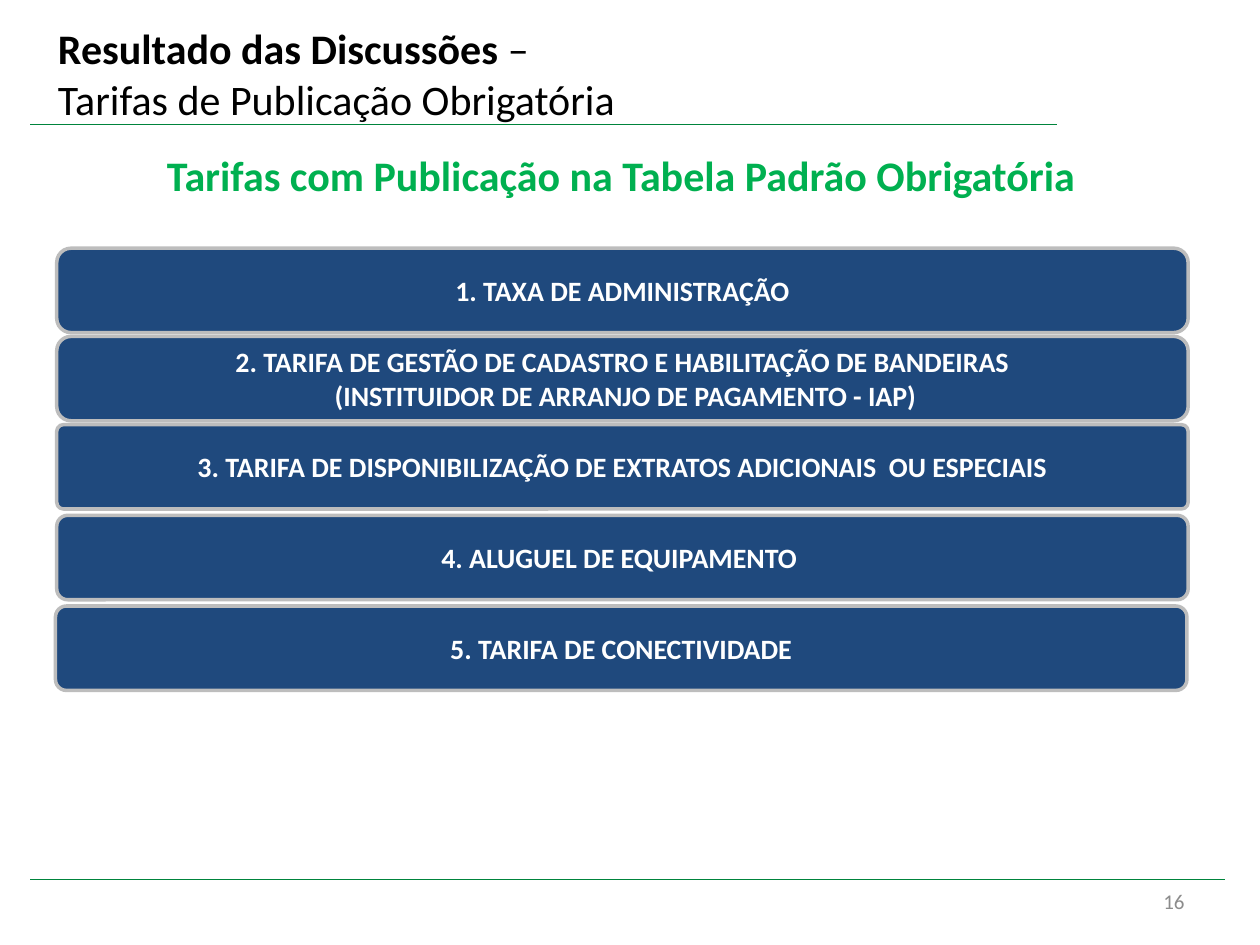
from dataclasses import dataclass

from lxml.etree import SubElement
from pptx import Presentation
from pptx.dml.color import RGBColor
from pptx.enum.shapes import MSO_CONNECTOR as Connector, MSO_SHAPE as Shape
from pptx.enum.text import MSO_ANCHOR as Anchor, MSO_AUTO_SIZE as AutoSize, PP_ALIGN as Align
from pptx.oxml.ns import qn
from pptx.util import Inches, Pt

SLIDE_WIDTH, SLIDE_HEIGHT = Inches(10), Inches(7.5)
COLUMN, ROW = SLIDE_WIDTH / 100, SLIDE_HEIGHT / 75


@dataclass(frozen=True)
class Theme:
    font: str = "Calibri"
    title: RGBColor = RGBColor(0x00, 0x00, 0x00)
    heading: RGBColor = RGBColor(0x00, 0xB0, 0x50)
    rule: RGBColor = RGBColor(0x00, 0x84, 0x3C)
    bar: RGBColor = RGBColor(0x1F, 0x49, 0x7D)
    bar_edge: RGBColor = RGBColor(0xBD, 0xBD, 0xBD)
    bar_text: RGBColor = RGBColor(0xFF, 0xFF, 0xFF)
    number: RGBColor = RGBColor(0x8C, 0x8C, 0x8C)
    large: Pt = Pt(24)
    medium: Pt = Pt(16)
    small: Pt = Pt(12)
    rule_width: Pt = Pt(0.75)
    edge_width: Pt = Pt(2)


@dataclass(frozen=True)
class Box:
    """An area in grid columns and rows."""
    left: float
    top: float
    width: float
    height: float

    def lengths(self):
        return (round(self.left * COLUMN), round(self.top * ROW),
                round(self.width * COLUMN), round(self.height * ROW))


@dataclass(frozen=True)
class Bar:
    """Its place is an offset from the list's corner; roundness is the corner share."""
    lines: tuple
    top: float
    roundness: float
    left: float = 0


THEME = Theme()
BAR_HEIGHT = 6.7
BARS = (
    Bar(("1. TAXA DE ADMINISTRAÇÃO",), 0, 0.17),
    Bar(("2. TARIFA DE GESTÃO DE CADASTRO E HABILITAÇÃO DE BANDEIRAS",
         " (INSTITUIDOR DE ARRANJO DE PAGAMENTO - IAP)"), 7, 0.17),
    Bar(("3. TARIFA DE DISPONIBILIZAÇÃO DE EXTRATOS ADICIONAIS  OU ESPECIAIS",), 14, 0.08),
    Bar(("4. ALUGUEL DE EQUIPAMENTO ",), 21.2, 0.13),
    Bar(("5. TARIFA DE CONECTIVIDADE",), 28.4, 0.13, left=-0.1),
)


def set_values(target, values):
    for name, value in values.items():
        setattr(target, name, value)


def add_run(paragraph, text, size, color, bold=False):
    run = paragraph.add_run()
    run.text = text
    set_values(run.font, {"name": THEME.font, "size": size, "bold": bold})
    run.font.color.rgb = color


def write_lines(frame, lines, alignment, **style):
    for index, line in enumerate(lines):
        paragraph = frame.add_paragraph() if index else frame.paragraphs[0]
        paragraph.alignment = alignment
        add_run(paragraph, line, **style)


def add_text_frame(slide, box, **values):
    frame = slide.shapes.add_textbox(*box.lengths()).text_frame
    set_values(frame, {"word_wrap": True, **values})
    return frame


def add_rule(slide, box):
    """Draw a line along the top of the box."""
    left, top, width, _ = box.lengths()
    line = slide.shapes.add_connector(Connector.STRAIGHT, left, top, left + width, top)
    line.line.color.rgb = THEME.rule
    line.line.width = THEME.rule_width
    SubElement(line._element.spPr, qn("a:effectLst"))


def add_title(slide, box):
    inset = Inches(0.04)
    frame = add_text_frame(slide, box, vertical_anchor=Anchor.MIDDLE,
                           margin_left=inset, margin_right=inset,
                           margin_top=inset, margin_bottom=inset)
    paragraph = frame.paragraphs[0]
    style = {"size": THEME.large, "color": THEME.title}
    add_run(paragraph, "Resultado das Discussões ", bold=True, **style)
    add_run(paragraph, "–", **style)
    paragraph.add_line_break()
    add_run(paragraph, "Tarifas de Publicação Obrigatória", **style)


def add_heading(slide, box):
    frame = add_text_frame(slide, box, auto_size=AutoSize.SHAPE_TO_FIT_TEXT)
    write_lines(frame, ["Tarifas com Publicação na Tabela Padrão Obrigatória"], Align.CENTER,
                size=THEME.large, color=THEME.heading, bold=True)


def add_bar(slide, box, bar):
    shape = slide.shapes.add_shape(Shape.ROUNDED_RECTANGLE, *box.lengths())
    shape.shadow.inherit = False
    shape.adjustments[0] = bar.roundness
    shape.fill.solid()
    shape.fill.fore_color.rgb = THEME.bar
    shape.line.color.rgb = THEME.bar_edge
    shape.line.width = THEME.edge_width
    set_values(shape.text_frame, {"word_wrap": True, "vertical_anchor": Anchor.MIDDLE})
    write_lines(shape.text_frame, bar.lines, Align.CENTER,
                size=THEME.medium, color=THEME.bar_text, bold=True)


def add_tariff_list(slide, box):
    for bar in BARS:
        add_bar(slide, Box(box.left + bar.left, box.top + bar.top, box.width, BAR_HEIGHT), bar)


def add_footer(slide, box):
    """Place the rule on top and the slide number at the right."""
    add_rule(slide, box)
    number_box = Box(box.left + 69.3, box.top - 0.3, 23.3, 4)
    frame = add_text_frame(slide, number_box, vertical_anchor=Anchor.MIDDLE)
    write_lines(frame, ["16"], Align.RIGHT, size=THEME.small, color=THEME.number)


def main():
    presentation = Presentation()
    set_values(presentation, {"slide_width": SLIDE_WIDTH, "slide_height": SLIDE_HEIGHT})
    slide = presentation.slides.add_slide(presentation.slide_layouts[6])
    add_rule(slide, Box(2.4, 9.9, 81.5, 0))
    add_footer(slide, Box(2.4, 69.8, 94.8, 4))
    add_tariff_list(slide, Box(4.5, 19.7, 89.8, 35.1))
    add_heading(slide, Box(4.3, 11.4, 90, 5))
    add_title(slide, Box(4.2, 2.9, 79.1, 5.8))
    presentation.save("out.pptx")


if __name__ == "__main__":
    main()
